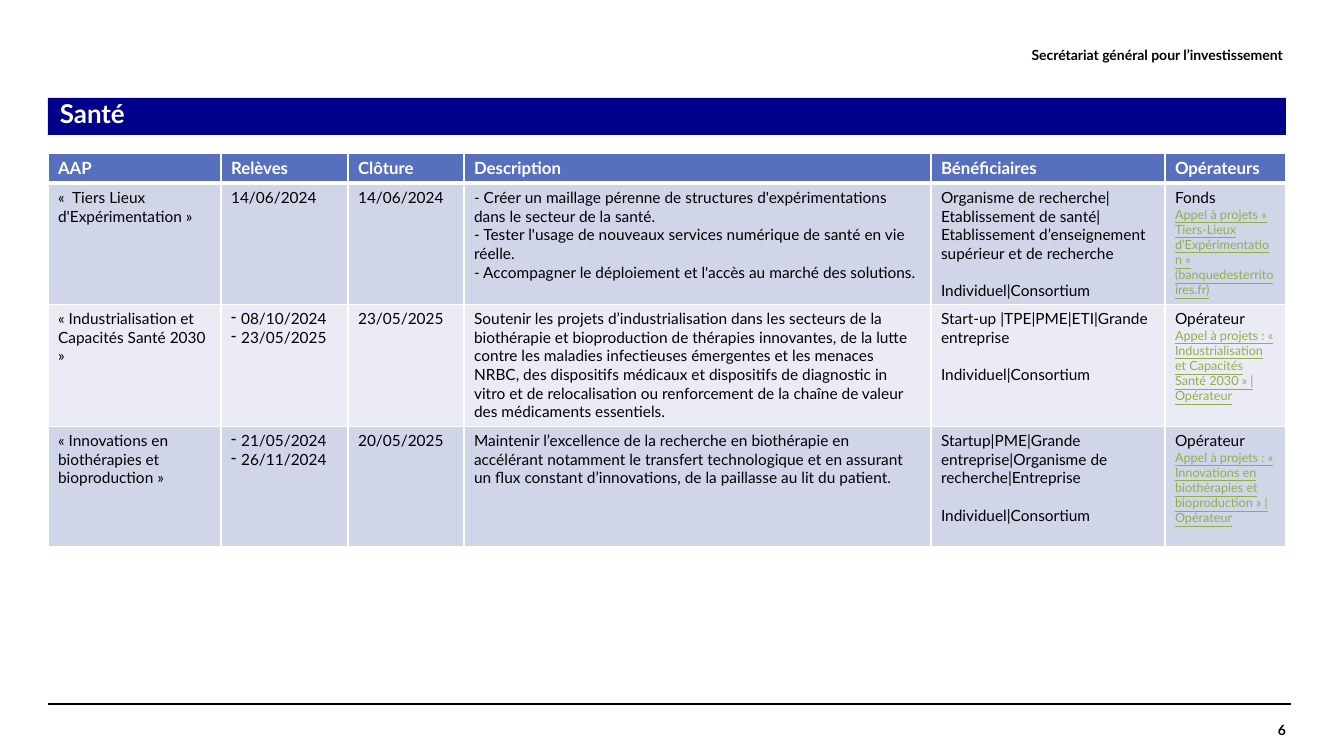
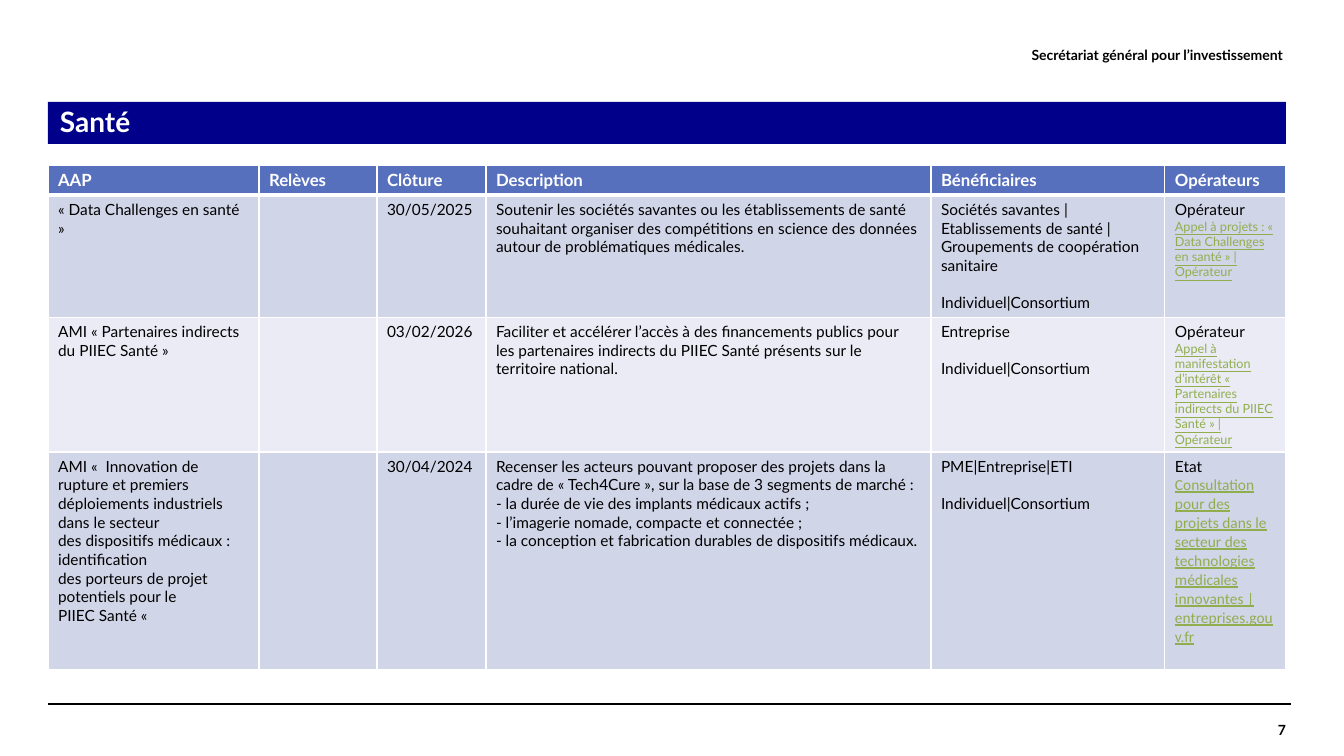
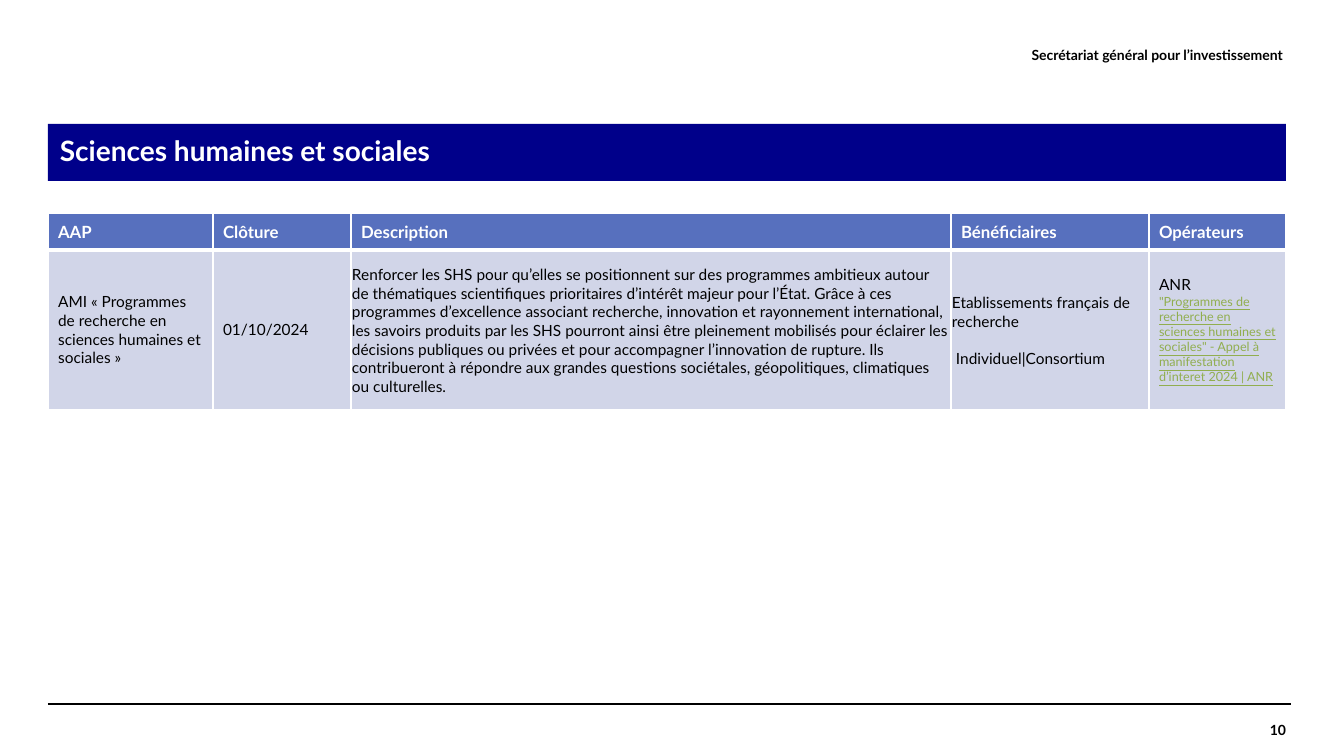
from lxml.etree import SubElement
from pptx import Presentation
from pptx.dml.color import RGBColor
from pptx.enum.shapes import MSO_CONNECTOR, MSO_SHAPE
from pptx.enum.text import MSO_ANCHOR, PP_ALIGN
from pptx.oxml import parse_xml
from pptx.oxml.ns import nsdecls, qn
from pptx.util import Pt

PX = 12192000 / 1344
SLIDE_WIDTH, SLIDE_HEIGHT = 1344, 756
LEFT, CONTENT_WIDTH = 48, 1238

THEME = {
    "band": "00008A",
    "header": "5770BE",
    "rows": ("D1D5E8", "EAEBF4"),
    "border": "FFFFFF",
    "rule": "000000",
    "thin": 1,
    "thick": 3,
    "styles": {
        "title": ("FFFFFF", {"name": "Lato", "size": Pt(20), "bold": True}),
        "compact_title": ("FFFFFF", {"name": "Lato", "size": Pt(18.5), "bold": True}),
        "margin": ("000000", {"name": "Lato", "size": Pt(10), "bold": True}),
        "header": ("FFFFFF", {"name": "Lato", "size": Pt(12), "bold": True}),
        "body": ("000000", {"name": "Lato", "size": Pt(11), "bold": False}),
        "link": ("91AE4F", {"name": "Lato", "size": Pt(9), "bold": False, "underline": True}),
        "large_link": ("91AE4F", {"name": "Calibri", "size": Pt(11), "bold": False, "underline": True}),
    },
    "formats": {
        "gap": {"space_before": Pt(13.2)},
        "indented_gap": {"space_before": Pt(13.2)},
    },
    "indents": {"bullet": (10, -10), "indented_gap": (4, 0), "title": (2, 0), "compact_title": (2, 0)},
}

ORGANISATION = "Secrétariat général pour l’investissement "
APPLICANTS = ("gap", "Individuel|Consortium")
COLUMNS = ["AAP", "Relèves", "Clôture", "Description", "Bénéficiaires", "Opérateurs"]

SLIDES = [
    {
        "number": "6",
        "title": "Santé",
        "title_style": "compact_title",
        "title_spacing": 0.8,
        "band": (98, 37),
        "table_top": 153,
        "anchor": MSO_ANCHOR.TOP,
        "columns": COLUMNS,
        "widths": [173, 127, 116, 467, 234, 121],
        "heights": [30, 121, 122, 120],
        "tight_columns": [],
        "rows": [
            [
                ["«  Tiers Lieux d'Expérimentation »"],
                ["14/06/2024"],
                ["14/06/2024"],
                [
                    "- Créer un maillage pérenne de structures d'expérimentations dans le secteur de la santé.",
                    "- Tester l'usage de nouveaux services numérique de santé en vie réelle.",
                    "- Accompagner le déploiement et l'accès au marché des solutions.",
                ],
                [
                    "Organisme de recherche|Etablissement de santé|Etablissement d’enseignement supérieur et de recherche",
                    APPLICANTS,
                ],
                ["Fonds", ("link", "Appel à projets « Tiers-Lieux d’Expérimentation » (banquedesterritoires.fr)")],
            ],
            [
                ["« Industrialisation et Capacités Santé 2030 »"],
                [("bullet", "08/10/2024"), ("bullet", "23/05/2025")],
                ["23/05/2025"],
                [
                    "Soutenir les projets d’industrialisation dans les secteurs de la biothérapie et bioproduction "
                    "de thérapies innovantes, de la lutte contre les maladies infectieuses émergentes et les menaces "
                    "NRBC, des dispositifs médicaux et dispositifs de diagnostic in vitro et de relocalisation ou "
                    "renforcement de la chaîne de valeur des médicaments essentiels."
                ],
                ["Start-up |TPE|PME|ETI|Grande entreprise", APPLICANTS],
                ["Opérateur", ("link", "Appel à projets : « Industrialisation et Capacités Santé 2030 » | Opérateur")],
            ],
            [
                ["« Innovations en biothérapies et bioproduction »"],
                [("bullet", "21/05/2024"), ("bullet", "26/11/2024")],
                ["20/05/2025"],
                [
                    "Maintenir l’excellence de la recherche en biothérapie en accélérant notamment le transfert "
                    "technologique et en assurant un flux constant d’innovations, de la paillasse au lit du patient."
                ],
                ["Startup|PME|Grande entreprise|Organisme de recherche|Entreprise", APPLICANTS],
                ["Opérateur", ("link", "Appel à projets : « Innovations en biothérapies et bioproduction » | Opérateur")],
            ],
        ],
    },
    {
        "number": "7",
        "title": "Santé",
        "title_style": "title",
        "title_spacing": 0.9,
        "band": (102, 42),
        "table_top": 165,
        "anchor": MSO_ANCHOR.TOP,
        "columns": COLUMNS,
        "widths": [211, 118, 109, 445, 234, 121],
        "heights": [30, 122, 134, 218],
        "tight_columns": [],
        "rows": [
            [
                ["« Data Challenges en santé »"],
                [],
                ["30/05/2025"],
                [
                    "Soutenir les sociétés savantes ou les établissements de santé souhaitant organiser des "
                    "compétitions en science des données autour de problématiques médicales."
                ],
                [
                    "Sociétés savantes | Etablissements de santé | Groupements de coopération sanitaire",
                    APPLICANTS,
                ],
                ["Opérateur", ("link", "Appel à projets : « Data Challenges en santé » | Opérateur")],
            ],
            [
                ["AMI « Partenaires indirects du PIIEC Santé »"],
                [],
                ["03/02/2026"],
                [
                    "Faciliter et accélérer l’accès à des financements publics pour les partenaires indirects "
                    "du PIIEC Santé présents sur le territoire national."
                ],
                ["Entreprise", APPLICANTS],
                [
                    "Opérateur",
                    ("link", "Appel à manifestation d’intérêt « Partenaires indirects du PIIEC Santé » | Opérateur"),
                ],
            ],
            [
                [
                    "AMI «  Innovation de rupture et premiers",
                    "déploiements industriels dans le secteur",
                    "des dispositifs médicaux : identification",
                    "des porteurs de projet potentiels pour le",
                    "PIIEC Santé « ",
                ],
                [],
                ["30/04/2024"],
                [
                    "Recenser les acteurs pouvant proposer des projets dans la cadre de « Tech4Cure », "
                    "sur la base de 3 segments de marché :",
                    "- la durée de vie des implants médicaux actifs ;",
                    "- l’imagerie nomade, compacte et connectée ;",
                    "- la conception et fabrication durables de dispositifs médicaux.",
                ],
                ["PME|Entreprise|ETI", APPLICANTS],
                [
                    "Etat",
                    (
                        "large_link",
                        "Consultation pour des projets dans le secteur des technologies médicales innovantes "
                        "| entreprises.gouv.fr",
                    ),
                ],
            ],
        ],
    },
    {
        "number": "10",
        "title": "Sciences humaines et sociales",
        "title_style": "title",
        "title_spacing": 0.9,
        "band": (124, 57),
        "table_top": 213,
        "anchor": MSO_ANCHOR.MIDDLE,
        "columns": [name for name in COLUMNS if name != "Relèves"],
        "widths": [165, 138, 600, 198, 137],
        "heights": [37, 160],
        "tight_columns": ["Description", "Bénéficiaires"],
        "rows": [
            [
                ["AMI « Programmes de recherche en sciences humaines et sociales »"],
                ["01/10/2024"],
                [
                    "Renforcer les SHS pour qu’elles se positionnent sur des programmes ambitieux autour de "
                    "thématiques scientifiques prioritaires d’intérêt majeur pour l’État. Grâce à ces programmes "
                    "d’excellence associant recherche, innovation et rayonnement international, les savoirs produits "
                    "par les SHS pourront ainsi être pleinement mobilisés pour éclairer les décisions publiques ou "
                    "privées et pour accompagner l’innovation de rupture. Ils contribueront à répondre aux grandes "
                    "questions sociétales, géopolitiques, climatiques ou culturelles."
                ],
                ["Etablissements français de recherche", ("indented_gap", "Individuel|Consortium")],
                [
                    "ANR",
                    (
                        "link",
                        '"Programmes de recherche en sciences humaines et sociales" - Appel à manifestation '
                        "d’interet 2024 | ANR",
                    ),
                ],
            ]
        ],
    },
]


def px(value):
    return round(value * PX)


def box(*values):
    return [px(value) for value in values]


def apply(target, values):
    for name, value in values.items():
        setattr(target, name, value)


def fill(target, color):
    target.fill.solid()
    target.fill.fore_color.rgb = RGBColor.from_string(color)


def write(text_frame, paragraphs, default="body", **formats):
    for index, entry in enumerate(paragraphs):
        style, text = (default, entry) if isinstance(entry, str) else entry
        paragraph = text_frame.add_paragraph() if index else text_frame.paragraphs[0]
        if style in THEME["indents"]:
            margin, indent = THEME["indents"][style]
            properties = paragraph._p.get_or_add_pPr()
            properties.set("marL", str(px(margin)))
            properties.set("indent", str(px(indent)))
            if style == "bullet":
                SubElement(properties, qn("a:buChar")).set("char", "-")
        apply(paragraph, {**THEME["formats"].get(style, {}), **formats})
        run = paragraph.add_run()
        run.text = text
        color, font = THEME["styles"].get(style, THEME["styles"]["body"])
        apply(run.font, font)
        run.font.color.rgb = RGBColor.from_string(color)


def set_borders(cell, top, bottom):
    widths = {"lnL": THEME["thin"], "lnR": THEME["thin"], "lnT": top, "lnB": bottom}
    properties = cell._tc.get_or_add_tcPr()
    for position, (side, width) in enumerate(widths.items()):
        border = parse_xml(
            f'<a:{side} {nsdecls("a")} w="{Pt(width)}"><a:solidFill>'
            f'<a:srgbClr val="{THEME["border"]}"/></a:solidFill></a:{side}>'
        )
        properties.insert(position, border)


def add_margin_text(slide, text, left, top, width, height):
    text_frame = slide.shapes.add_textbox(*box(left, top, width, height)).text_frame
    margins = dict.fromkeys(("margin_left", "margin_top", "margin_right", "margin_bottom"), 0)
    apply(text_frame, {"word_wrap": True, "vertical_anchor": MSO_ANCHOR.MIDDLE, **margins})
    write(text_frame, [text], "margin", alignment=PP_ALIGN.RIGHT)


def add_frame(slide, content):
    rule = slide.shapes.add_connector(MSO_CONNECTOR.STRAIGHT, *box(LEFT, 704, 1291, 704))
    rule.line.color.rgb = RGBColor.from_string(THEME["rule"])
    rule.line.width = Pt(0.8)
    SubElement(rule._element.spPr, qn("a:effectLst"))
    add_margin_text(slide, content["number"], 1087, 704, 199, 52)
    add_margin_text(slide, ORGANISATION, 422, 29, 864, 52)

    top, height = content["band"]
    band = slide.shapes.add_shape(MSO_SHAPE.RECTANGLE, *box(LEFT, top, CONTENT_WIDTH, height))
    band.shadow.inherit = False
    fill(band, THEME["band"])
    band.line.fill.background()
    apply(band.text_frame, {"word_wrap": True, "vertical_anchor": MSO_ANCHOR.MIDDLE})
    write(
        band.text_frame,
        [content["title"]],
        content["title_style"],
        alignment=PP_ALIGN.LEFT,
        line_spacing=content["title_spacing"],
    )


def add_calls_table(slide, content):
    columns, widths, heights = content["columns"], content["widths"], content["heights"]
    area = box(LEFT, content["table_top"], sum(widths), sum(heights))
    table = slide.shapes.add_table(len(heights), len(widths), *area).table
    table.horz_banding = False
    for column, width in zip(table.columns, widths):
        column.width = px(width)
    for row, height in zip(table.rows, heights):
        row.height = px(height)

    rows = [[[name] for name in columns], *content["rows"]]
    for row_index, row in enumerate(rows):
        is_header = row_index == 0
        color = THEME["header"] if is_header else THEME["rows"][(row_index - 1) % 2]
        top = THEME["thick"] if row_index == 1 else THEME["thin"]
        bottom = THEME["thick"] if is_header else THEME["thin"]
        for column_index, paragraphs in enumerate(row):
            cell = table.cell(row_index, column_index)
            cell.vertical_anchor = content["anchor"]
            if not is_header and columns[column_index] in content["tight_columns"]:
                apply(cell, {"margin_left": px(1), "margin_top": px(1), "margin_right": px(1), "margin_bottom": 0})
            fill(cell, color)
            set_borders(cell, top, bottom)
            write(cell.text_frame, paragraphs, "header" if is_header else "body")


def main():
    presentation = Presentation()
    presentation.slide_width, presentation.slide_height = box(SLIDE_WIDTH, SLIDE_HEIGHT)
    for content in SLIDES:
        slide = presentation.slides.add_slide(presentation.slide_layouts[6])
        add_frame(slide, content)
        add_calls_table(slide, content)
    presentation.save("out.pptx")


if __name__ == "__main__":
    main()
